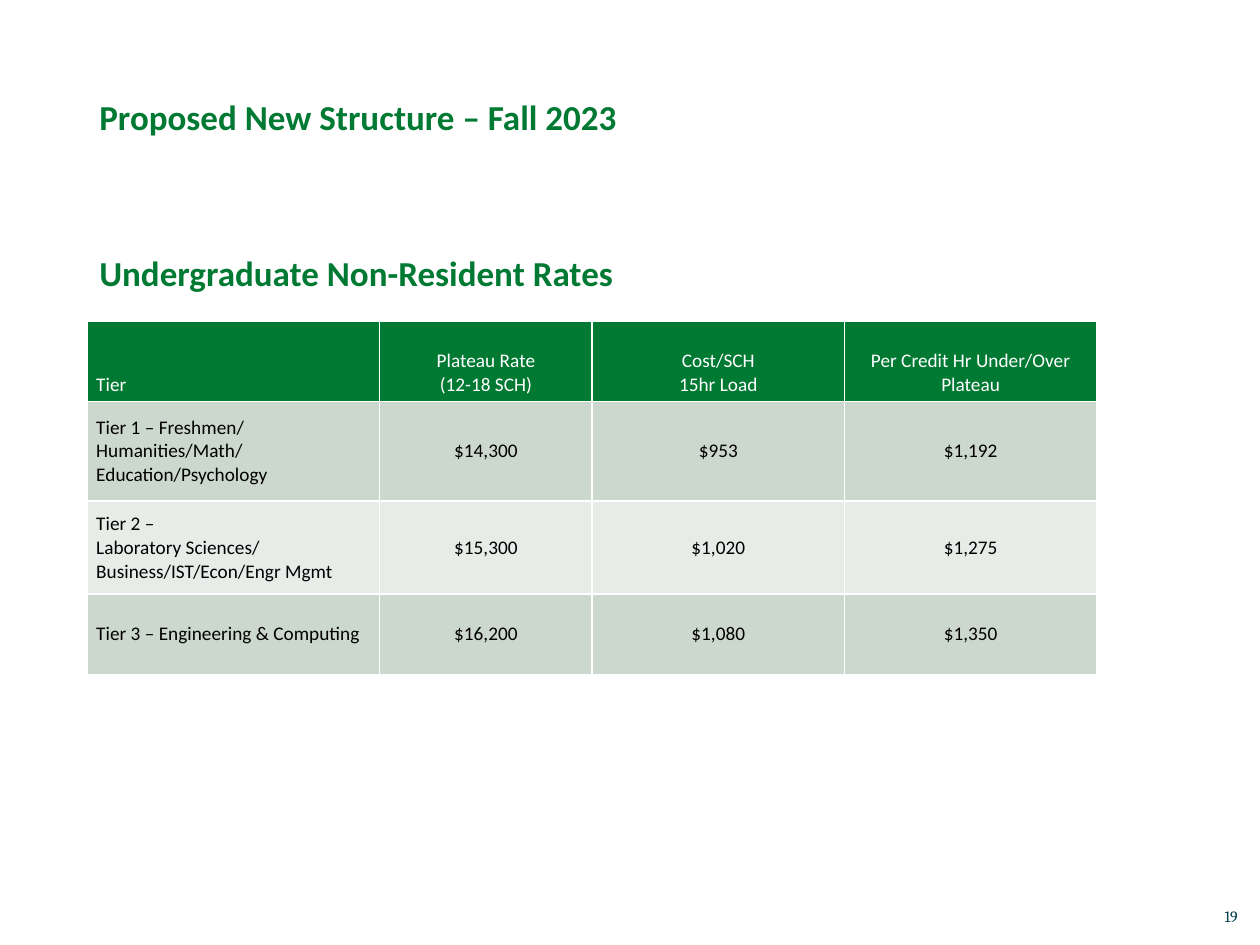
"""Build the slide on proposed undergraduate non-resident rates."""
from lxml.etree import fromstring
from pptx import Presentation
from pptx.dml.color import RGBColor
from pptx.enum.text import MSO_ANCHOR, PP_ALIGN
from pptx.oxml.ns import nsdecls
from pptx.util import Pt

GREEN, WHITE, BLACK, NAVY = "007933", "FFFFFF", "000000", "003B49"
BANDS = ["CCD7CE", "E7ECE8"]


def add_line(paragraph, text, size, color, bold=False, font="Calibri"):
    run = paragraph.add_run()
    run.text = text
    run.font.name = font
    run.font.size = Pt(size)
    run.font.bold = bold
    run.font.color.rgb = RGBColor.from_string(color)


prs = Presentation()
prs.slide_width, prs.slide_height = Pt(720), Pt(540)
slide = prs.slides.add_slide(prs.slide_layouts[6])

labels = [
    ("19", 692.64, 514.8, 36.72, 18, 9, NAVY, False, "Cambria"),
    ("Proposed New Structure – Fall 2023", 49.68, 28.8, 596.16, 75.6, 20, GREEN, True, "Calibri"),
    ("Undergraduate Non-Resident Rates", 49.68, 139.68, 588.24, 31.68, 20, GREEN, True, "Calibri"),
]
for text, left, top, width, height, size, color, bold, font in labels:
    frame = slide.shapes.add_textbox(Pt(left), Pt(top), Pt(width), Pt(height)).text_frame
    frame.word_wrap = True
    frame.vertical_anchor = MSO_ANCHOR.MIDDLE
    add_line(frame.paragraphs[0], text, size, color, bold, font)

rates = [
    ["Tier", "Plateau Rate\n(12-18 SCH)", "Cost/SCH\n15hr Load", "Per Credit Hr Under/Over Plateau"],
    ["Tier 1 – Freshmen/ Humanities/Math/\nEducation/Psychology", "$14,300", "$953", "$1,192"],
    ["Tier 2 –\nLaboratory Sciences/\nBusiness/IST/Econ/Engr Mgmt", "$15,300", "$1,020", "$1,275"],
    ["Tier 3 – Engineering & Computing", "$16,200", "$1,080", "$1,350"],
]
column_widths = [167, 121.4, 144.2, 144.2]
row_heights = [45.8, 57, 53.2, 45.8]

rate_table = slide.shapes.add_table(
    len(rates), len(column_widths), Pt(50), Pt(183.6), Pt(sum(column_widths)), Pt(sum(row_heights))
).table
for column, width in zip(rate_table.columns, column_widths):
    column.width = Pt(width)

for row_index, (entries, height) in enumerate(zip(rates, row_heights)):
    is_header = row_index == 0
    rate_table.rows[row_index].height = Pt(height)
    for column_index, entry in enumerate(entries):
        cell = rate_table.cell(row_index, column_index)
        cell.fill.solid()
        cell.fill.fore_color.rgb = RGBColor.from_string(GREEN if is_header else BANDS[(row_index - 1) % 2])
        cell.vertical_anchor = MSO_ANCHOR.BOTTOM if is_header else MSO_ANCHOR.MIDDLE
        cell.margin_left = cell.margin_right = Pt(5)
        cell.margin_top = cell.margin_bottom = Pt(2.7)
        for line_index, line in enumerate(entry.split("\n")):
            frame = cell.text_frame
            paragraph = frame.add_paragraph() if line_index else frame.paragraphs[0]
            paragraph.alignment = PP_ALIGN.CENTER if column_index else PP_ALIGN.LEFT
            add_line(paragraph, line, 11, WHITE if is_header else BLACK)
        properties = cell._tc.get_or_add_tcPr()
        for position, side in enumerate("LRTB"):
            border = fromstring(
                f'<a:ln{side} {nsdecls("a")} w="{Pt(1)}"><a:solidFill>'
                f'<a:srgbClr val="{WHITE}"/></a:solidFill></a:ln{side}>'
            )
            properties.insert(position, border)

prs.save("out.pptx")
